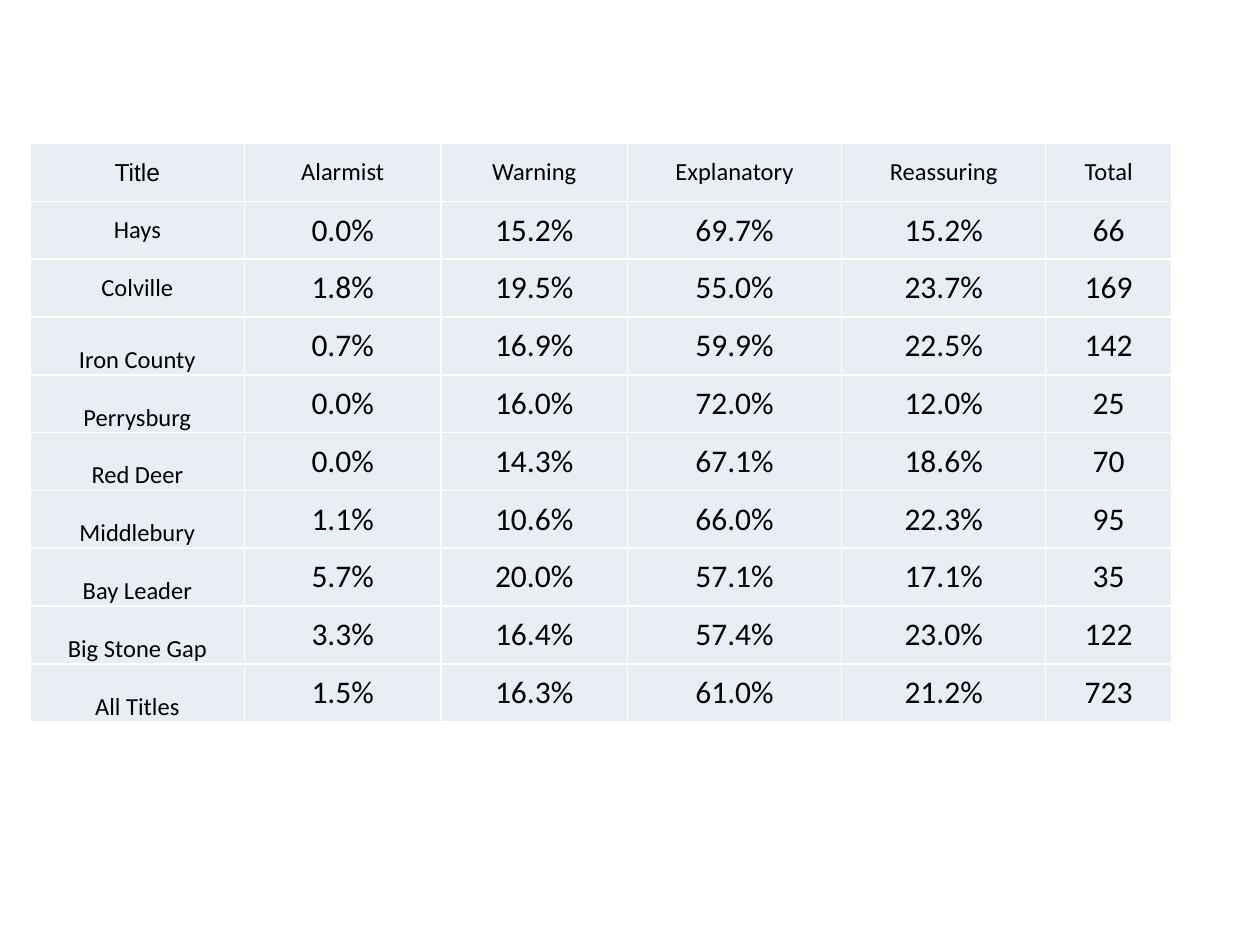
from dataclasses import dataclass

from lxml.etree import SubElement
from pptx import Presentation
from pptx.dml.color import RGBColor as RGB
from pptx.enum.text import MSO_ANCHOR as ANCHOR, PP_ALIGN as ALIGN
from pptx.oxml.ns import qn
from pptx.util import Pt

HEADERS = ["Title", "Alarmist", "Warning", "Explanatory", "Reassuring", "Total"]
TITLES = [
    ("Hays", 0.0, 15.2, 69.7, 15.2, 66),
    ("Colville", 1.8, 19.5, 55.0, 23.7, 169),
    ("Iron County", 0.7, 16.9, 59.9, 22.5, 142),
    ("Perrysburg", 0.0, 16.0, 72.0, 12.0, 25),
    ("Red Deer", 0.0, 14.3, 67.1, 18.6, 70),
    ("Middlebury", 1.1, 10.6, 66.0, 22.3, 95),
    ("Bay Leader", 5.7, 20.0, 57.1, 17.1, 35),
    ("Big Stone Gap", 3.3, 16.4, 57.4, 23.0, 122),
    ("All Titles", 1.5, 16.3, 61.0, 21.2, 723),
]
COL_WIDTHS = [122.4, 112.3, 106.6, 122.4, 116.6, 72]
ROW_HEIGHT = 33.05
LEFT, TOP = 17.3, 82.1
FIRST_BOTTOM_ROW = 3


@dataclass(frozen=True)
class Theme:
    text: RGB = RGB(0, 0, 0)
    cell: RGB = RGB(0xE9, 0xED, 0xF4)
    border: str = "FFFFFF"
    border_width: int = 1
    label_size: int = 14
    value_size: int = 18
    corner_font: str = "Arial"
    font: str = "Calibri"


THEME = Theme()


def set_all(target, values):
    for name, value in values.items():
        setattr(target, name, value)


def add_borders(cell):
    tc_pr = cell._tc.get_or_add_tcPr()
    for side in ("lnL", "lnR", "lnT", "lnB"):
        ln = SubElement(tc_pr, qn(f"a:{side}"), w=str(Pt(THEME.border_width)))
        fill = SubElement(ln, qn("a:solidFill"))
        SubElement(fill, qn("a:srgbClr"), val=THEME.border)


def fill_cell(cell, value, row, col):
    is_label = row == 0 or col == 0
    at_bottom = col == 0 and row >= FIRST_BOTTOM_ROW
    add_borders(cell)
    cell.fill.solid()
    cell.fill.fore_color.rgb = THEME.cell
    set_all(cell, {
        "margin_left": 0, "margin_right": 0, "margin_top": 0, "margin_bottom": 0,
        "vertical_anchor": ANCHOR.BOTTOM if at_bottom else ANCHOR.MIDDLE,
    })
    p = cell.text_frame.paragraphs[0]
    p.alignment = ALIGN.CENTER
    r = p.add_run()
    r.text = f"{value:.1f}%" if isinstance(value, float) else str(value)
    set_all(r.font, {
        "name": THEME.corner_font if row == col == 0 else THEME.font,
        "size": Pt(THEME.label_size if is_label else THEME.value_size),
        "bold": False,
    })
    r.font.color.rgb = THEME.text


prs = Presentation()
set_all(prs, {"slide_width": Pt(720), "slide_height": Pt(540)})
s = prs.slides.add_slide(prs.slide_layouts[6])

rows = [HEADERS, *TITLES]
table = s.shapes.add_table(
    len(rows), len(HEADERS), Pt(LEFT), Pt(TOP),
    Pt(sum(COL_WIDTHS)), Pt(ROW_HEIGHT * len(rows)),
).table
set_all(table, {"first_row": False, "horz_banding": False})
for column, width in zip(table.columns, COL_WIDTHS):
    column.width = Pt(width)
for i, values in enumerate(rows):
    table.rows[i].height = Pt(ROW_HEIGHT)
    for j, value in enumerate(values):
        fill_cell(table.cell(i, j), value, i, j)

prs.save("out.pptx")
